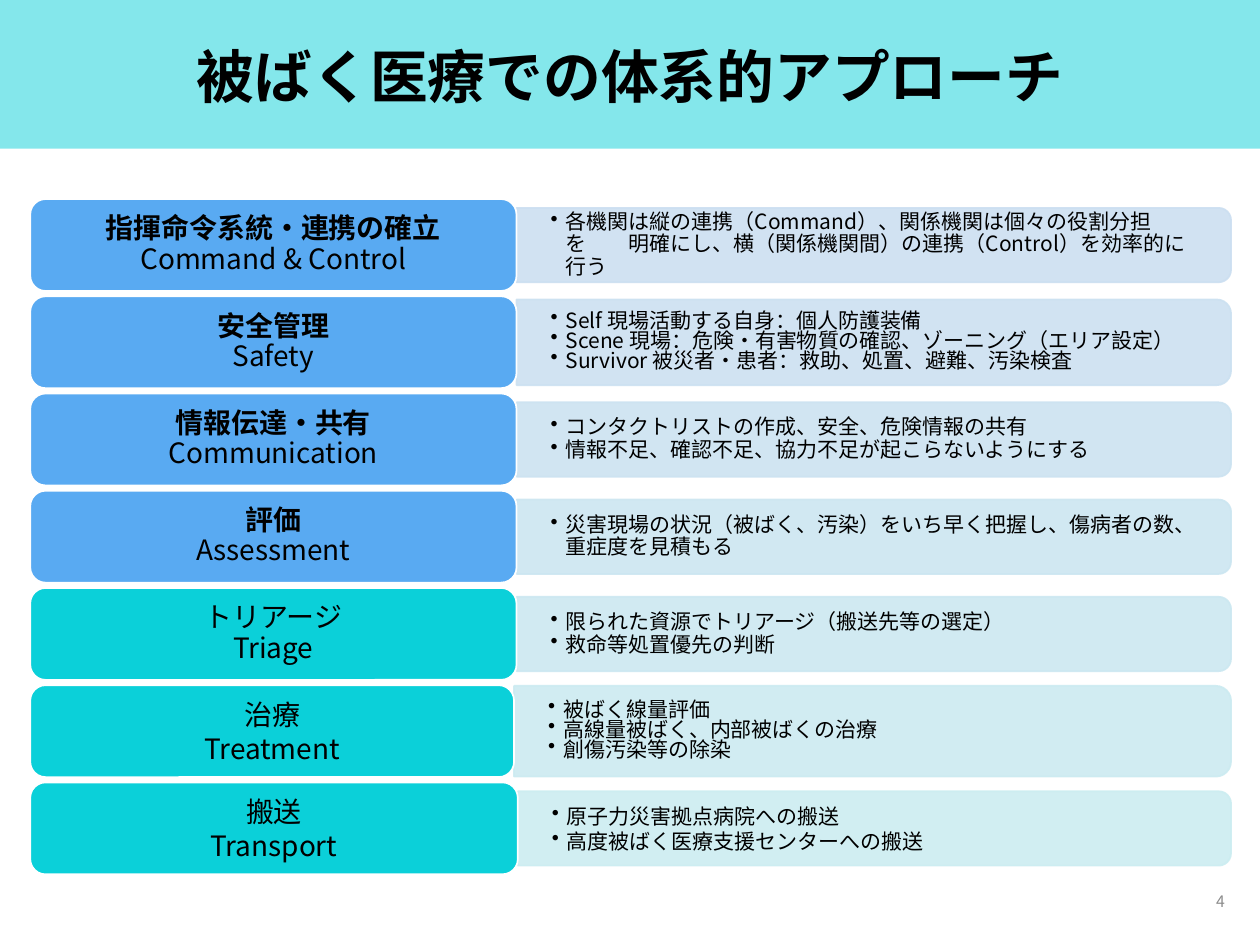
from dataclasses import dataclass

from lxml.etree import SubElement
from pptx import Presentation
from pptx.dml.color import RGBColor
from pptx.enum.shapes import MSO_SHAPE
from pptx.enum.text import MSO_ANCHOR, PP_ALIGN
from pptx.oxml.ns import qn
from pptx.util import Inches, Pt

FONT = "Noto Sans CJK JP"
BLUE, TEAL = "59AAF2", "0BD0D9"
LEFT, RIGHT = 0.24, 9.77
TOP, LAST = 1.58, 6.21
HIGH = 0.73


@dataclass
class Row:
    name: str
    english: str
    points: list[str]
    tint: str
    fill: str = BLUE
    bold: bool = True
    split: float = 4.1
    depth: float = 0.59
    label_gap: float = 0.9
    point_gap: float = 0.9
    font: str = FONT


ROWS = [
    Row("指揮命令系統・連携の確立", "Command & Control",
        ["各機関は縦の連携（Command）、関係機関は個々の役割分担を　　明確にし、"
         "横（関係機関間）の連携（Control）を効率的に行う"], "CCDFF1"),
    Row("安全管理", "Safety",
        ["Self 現場活動する自身：個人防護装備",
         "Scene 現場：危険・有害物質の確認、ゾーニング（エリア設定）",
         "Survivor 被災者・患者：救助、処置、避難、汚染検査"],
        "CCE1F1", depth=0.68, point_gap=0.8),
    Row("情報伝達・共有", "Communication",
        ["コンタクトリストの作成、安全、危険情報の共有",
         "情報不足、確認不足、協力不足が起こらないようにする"], "CCE3F1"),
    Row("評価", "Assessment",
        ["災害現場の状況（被ばく、汚染）をいち早く把握し、傷病者の数、重症度を見積もる"],
        "CCE6F1"),
    Row("トリアージ", "Triage",
        ["限られた資源でトリアージ（搬送先等の選定）", "救命等処置優先の判断"],
        "CCE8F1", TEAL, False),
    Row("治療", "Treatment",
        ["被ばく線量評価", "高線量被ばく、内部被ばくの治療", "創傷汚染等の除染"],
        "CCEBF1", TEAL, False, split=4.08, depth=0.72, label_gap=1.0, point_gap=0.8),
    Row("搬送", "Transport",
        ["原子力災害拠点病院への搬送", "高度被ばく医療支援センターへの搬送"],
        "CCEDF1", TEAL, False, split=4.11, label_gap=1.0, point_gap=1.0, font="Arial"),
]


def rgb(code: str) -> RGBColor:
    return RGBColor.from_string(code)


def add_box(slide, kind, left: float, top: float, width: float, height: float,
            fill: str, line: str | None = None, alpha: int = 100):
    """Draw a filled shape; alpha is the opacity in percent."""
    box = slide.shapes.add_shape(kind, Inches(left), Inches(top),
                                 Inches(width), Inches(height))
    box.shadow.inherit = False
    box.fill.solid()
    box.fill.fore_color.rgb = rgb(fill)
    if line:
        box.line.color.rgb = rgb(line)
        box.line.width = Pt(1)
    else:
        box.line.fill.background()
    if alpha < 100:
        for color in box._element.spPr.iter(qn("a:srgbClr")):
            SubElement(color, qn("a:alpha"), val=str(alpha * 1000))
    return box


def set_frame(frame, side: float = 0.1, edge: float = 0.05) -> None:
    """Wrap the text, centre it upright and set its insets."""
    frame.word_wrap = True
    frame.vertical_anchor = MSO_ANCHOR.MIDDLE
    frame.margin_left = frame.margin_right = Inches(side)
    frame.margin_top = frame.margin_bottom = Inches(edge)


def add_text(slide, left: float, top: float, width: float, height: float,
             side: float = 0.1, edge: float = 0.05):
    box = slide.shapes.add_textbox(Inches(left), Inches(top),
                                   Inches(width), Inches(height))
    set_frame(box.text_frame, side, edge)
    return box.text_frame


def write(frame, lines: list[str], size: float, align=PP_ALIGN.LEFT, gap: float = 1.0,
          color: str = "000000", bold: bool = False, face: str = FONT,
          bullet: bool = False) -> None:
    frame.text = "\n".join(lines)
    for para in frame.paragraphs:
        para.alignment = align
        para.line_spacing = gap
        font = para.font
        font.size, font.bold = Pt(size), bold
        font.color.rgb = rgb(color)
        font.name = face
        props = para._p.get_or_add_pPr()
        base = props.find(qn("a:defRPr"))
        SubElement(base, qn("a:ea"), typeface=face)
        if bullet:
            indent = Inches(0.12)
            props.set("marL", str(indent))
            props.set("indent", str(-indent))
            mark = SubElement(props, qn("a:buChar"), char="•")
            base.addprevious(mark)


def add_row(slide, row: Row, top: float) -> None:
    mid = top + HIGH / 2
    wide = RIGHT - row.split
    # The panel is turned a quarter so that its round corners face right.
    panel = add_box(slide, MSO_SHAPE.ROUND_2_SAME_RECTANGLE,
                    row.split + (wide - row.depth) / 2, mid - wide / 2,
                    row.depth, wide, row.tint, row.tint, 90)
    panel.rotation = 90
    tall = row.depth - 0.06
    points = add_text(slide, row.split, mid - tall / 2, wide - 0.03, tall, 0.27, 0.14)
    write(points, row.points, 12, gap=row.point_gap, face=row.font, bullet=True)

    label = add_box(slide, MSO_SHAPE.ROUNDED_RECTANGLE, LEFT, top,
                    row.split - LEFT, HIGH, row.fill, "FFFFFF").text_frame
    set_frame(label, 0.1, 0.07)
    write(label, [row.name, row.english], 16, PP_ALIGN.CENTER, row.label_gap)
    label.paragraphs[0].font.bold = row.bold


def main() -> None:
    deck = Presentation()
    deck.slide_width, deck.slide_height = Inches(10), Inches(7.5)
    slide = deck.slides.add_slide(deck.slide_layouts[6])

    add_box(slide, MSO_SHAPE.RECTANGLE, 0, 0, 10, 1.18, TEAL, alpha=50)
    title = add_text(slide, 0.69, 0.21, 8.62, 0.85)
    write(title, ["被ばく医療での体系的アプローチ"], 33, PP_ALIGN.CENTER, 0.9, bold=True)

    step = (LAST - TOP) / (len(ROWS) - 1)
    for i, row in enumerate(ROWS):
        add_row(slide, row, TOP + i * step)

    number = add_text(slide, 7.57, 6.95, 2.25, 0.4)
    write(number, ["4"], 9, PP_ALIGN.RIGHT, color="8C8C8C")
    deck.save("out.pptx")


if __name__ == "__main__":
    main()
